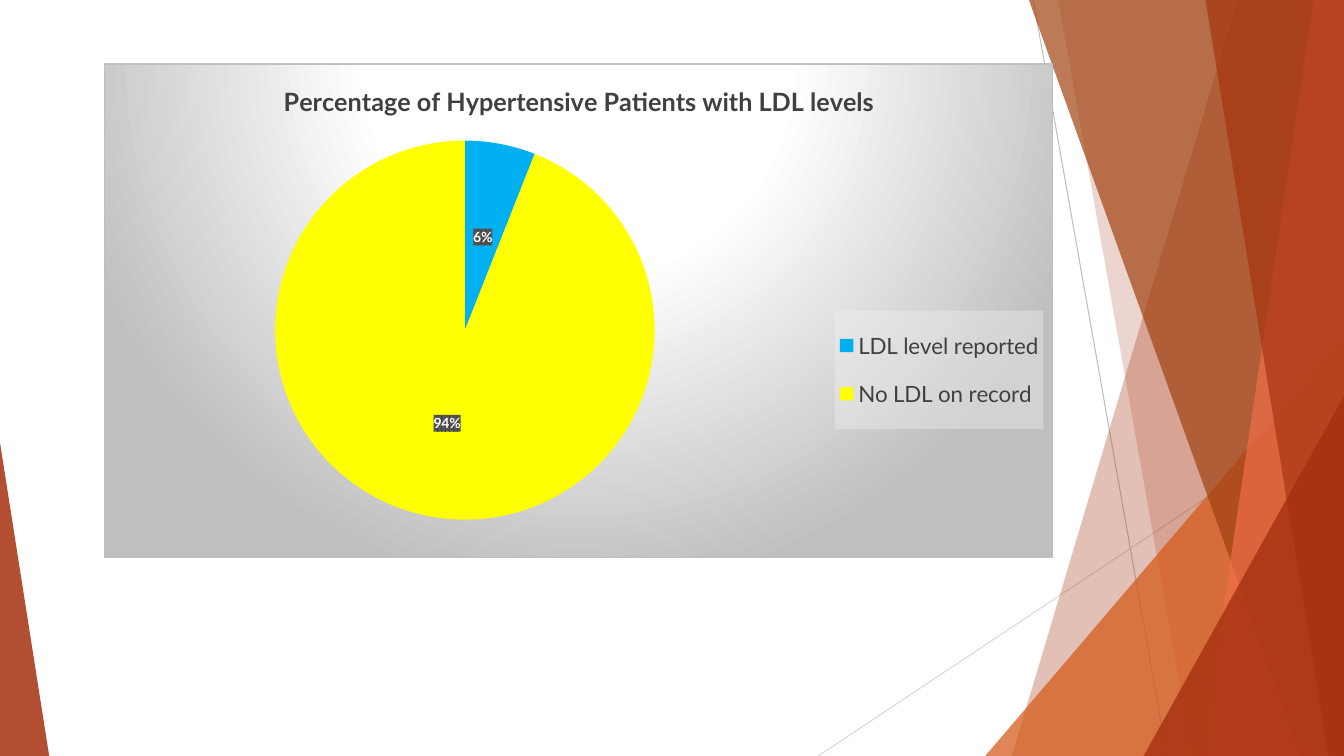
import pptx
import pptx.chart.data
import pptx.dml.color
import pptx.enum.chart
import pptx.enum.shapes
import pptx.oxml
import pptx.oxml.ns
import pptx.util
from pptx.util import Cm

SLIDE_W, SLIDE_H = 33.87, 19.05
FONT = "Lato"
COLORS = {
    "brick": "A5300F", "orange": "D55816", "brown": "A04210", "coral": "EE6E4A",
    "rule_dark": "BFBFBF", "rule_light": "D9D9D9", "white": "FFFFFF",
    "text": "404040", "label_back": "595959", "legend_back": "F2F2F2",
    "reported": "00B0F0", "missing": "FFFF00",
}


def rgb(name):
    return pptx.dml.color.RGBColor.from_string(COLORS[name])


def chart_xml(tag, body):
    declarations = pptx.oxml.ns.nsdecls("c", "a")
    return pptx.oxml.parse_xml(f"<c:{tag} {declarations}>{body}</c:{tag}>")


def color_xml(name, inner=""):
    return f'<a:srgbClr val="{COLORS[name]}">{inner}</a:srgbClr>'


def manual_layout(x, y, w, h, target=""):
    modes = '<c:xMode val="edge"/><c:yMode val="edge"/>'
    sizes = "".join(f'<c:{tag} val="{value}"/>'
                    for tag, value in zip("xywh", (x, y, w, h)))
    return chart_xml("layout", f"<c:manualLayout>{target}{modes}{sizes}</c:manualLayout>")


# Background facets
def paint(shape, color, opacity):
    shape.shadow.inherit = False
    shape.fill.solid()
    shape.fill.fore_color.rgb = rgb(color)
    shape.line.fill.background()
    fill_color = shape.element.xpath("./p:spPr/a:solidFill/a:srgbClr")[0]
    alpha = pptx.oxml.parse_xml(
        f'<a:alpha {pptx.oxml.ns.nsdecls("a")} val="{opacity * 1000}"/>')
    fill_color.append(alpha)


def add_rule(slide, start, end, color):
    rule = slide.shapes.add_connector(pptx.enum.shapes.MSO_CONNECTOR.STRAIGHT,
                                      *map(Cm, start + end))
    rule.line.color.rgb = rgb(color)
    rule.line.width = pptx.util.Pt(0.75)
    rule.element.spPr.append(
        pptx.oxml.parse_xml(f'<a:effectLst {pptx.oxml.ns.nsdecls("a")}/>'))


def add_panel(slide, right, height, top_x, bottom_x, color, opacity):
    """Four-sided facet from a slanted left edge to the right side."""
    outline = slide.shapes.build_freeform(Cm(top_x), 0)
    corners = [(right, 0), (right, height), (bottom_x, height)]
    outline.add_line_segments([(Cm(x), Cm(y)) for x, y in corners], close=True)
    paint(outline.convert_to_shape(), color, opacity)


def add_corner(slide, left, bottom, width, height, apex, color, opacity):
    corner = slide.shapes.add_shape(
        pptx.enum.shapes.MSO_SHAPE.ISOSCELES_TRIANGLE,
        Cm(left), Cm(bottom - height), Cm(width), Cm(height))
    corner.adjustments[0] = apex
    paint(corner, color, opacity)


def add_facets(slide, width, height):
    add_rule(slide, (26.04, 0), (29.41, height), "rule_dark")
    add_rule(slide, (width, 10.24), (20.62, height), "rule_light")
    add_panel(slide, width, height, 31.19, 25.5, "brick", 30)
    add_panel(slide, width, height, 26.67, 30.05, "brick", 20)
    add_corner(slide, width - 9.04, height, 9.04, 10.59, 1, "orange", 72)
    for top_x, bottom_x, color, opacity in (
            (25.93, 32.79, "brown", 70),
            (33.1, 30.28, "coral", 70),
            (30.38, 33.48, "brick", 65)):
        add_panel(slide, width, height, top_x, bottom_x, color, opacity)
    add_corner(slide, width - 5.05, height, 5.05, 9.07, 1, "brick", 80)
    add_corner(slide, 0, height, 1.24, 7.9, 0, "brick", 85)


# LDL pie chart
def style_font(font, size, color, bold=False):
    font.name = FONT
    font.size = pptx.util.Pt(size)
    font.bold = bold
    font.color.rgb = rgb(color)


def set_layout(parent, index, layout):
    for old_layout in parent.xpath("./c:layout"):
        parent.remove(old_layout)
    parent.insert(index, layout)


def style_chart_area(space):
    stops = "".join(f'<a:gs pos="{pos * 1000}">{color_xml(color)}</a:gs>'
                    for pos, color in ((0, "white"), (39, "white"), (100, "rule_dark")))
    space.xpath("./c:chart")[0].addnext(chart_xml(
        "spPr",
        f'<a:gradFill><a:gsLst>{stops}</a:gsLst><a:path path="circle">'
        '<a:fillToRect l="50000" t="-80000" r="50000" b="180000"/></a:path></a:gradFill>'
        f'<a:ln w="9525"><a:solidFill>{color_xml("rule_dark")}</a:solidFill></a:ln>'))


def add_ldl_chart(slide, left, top, width, height):
    data = pptx.chart.data.CategoryChartData()
    data.categories = ["LDL level reported", "No LDL on record"]
    data.add_series("Series 1", (6, 94))
    chart = slide.shapes.add_chart(
        pptx.enum.chart.XL_CHART_TYPE.PIE,
        Cm(left), Cm(top), Cm(width), Cm(height), data).chart
    space = chart.element
    style_font(chart.font, 10, "text")
    style_chart_area(space)

    # Title
    chart.has_title = True
    heading = chart.chart_title.text_frame
    heading.text = "Percentage of Hypertensive Patients with LDL levels"
    style_font(heading.paragraphs[0].font, 18, "text", True)
    chart.chart_title.include_in_layout = False

    # Slices and their percentages
    pie = chart.plots[0]
    pie.vary_by_categories = True
    patients = pie.series[0]
    for index, color in enumerate(("reported", "missing")):
        slice_fill = patients.points[index].format.fill
        slice_fill.solid()
        slice_fill.fore_color.rgb = rgb(color)
    percentages = patients.data_labels
    percentages.show_value = False
    percentages.show_percentage = True
    percentages.position = pptx.enum.chart.XL_LABEL_POSITION.CENTER
    style_font(percentages.font, 10, "white", True)
    space.xpath(".//c:ser/c:dLbls/c:txPr")[0].addprevious(chart_xml(
        "spPr",
        f'<a:pattFill prst="pct75"><a:fgClr>{color_xml("text")}</a:fgClr>'
        f'<a:bgClr>{color_xml("label_back")}</a:bgClr></a:pattFill>'))
    set_layout(space.xpath(".//c:plotArea")[0], 0, manual_layout(
        0.18, 0.15, 0.4, 0.78, '<c:layoutTarget val="inner"/>'))

    # Legend
    chart.has_legend = True
    legend = chart.legend
    legend.position = pptx.enum.chart.XL_LEGEND_POSITION.RIGHT
    legend.include_in_layout = False
    style_font(legend.font, 16, "text")
    legend_xml = space.xpath(".//c:legend")[0]
    set_layout(legend_xml, 1, manual_layout(0.77, 0.5, 0.22, 0.24))
    back = color_xml("legend_back", '<a:alpha val="39000"/>')
    legend_xml.xpath("./c:txPr")[0].addprevious(
        chart_xml("spPr", f"<a:solidFill>{back}</a:solidFill>"))


def main():
    deck = pptx.Presentation()
    deck.slide_width, deck.slide_height = Cm(SLIDE_W), Cm(SLIDE_H)
    slide = deck.slides.add_slide(deck.slide_layouts[6])
    add_facets(slide, SLIDE_W, SLIDE_H)
    add_ldl_chart(slide, 2.62, 1.6, 23.93, 12.45)
    deck.save("out.pptx")


if __name__ == "__main__":
    main()
